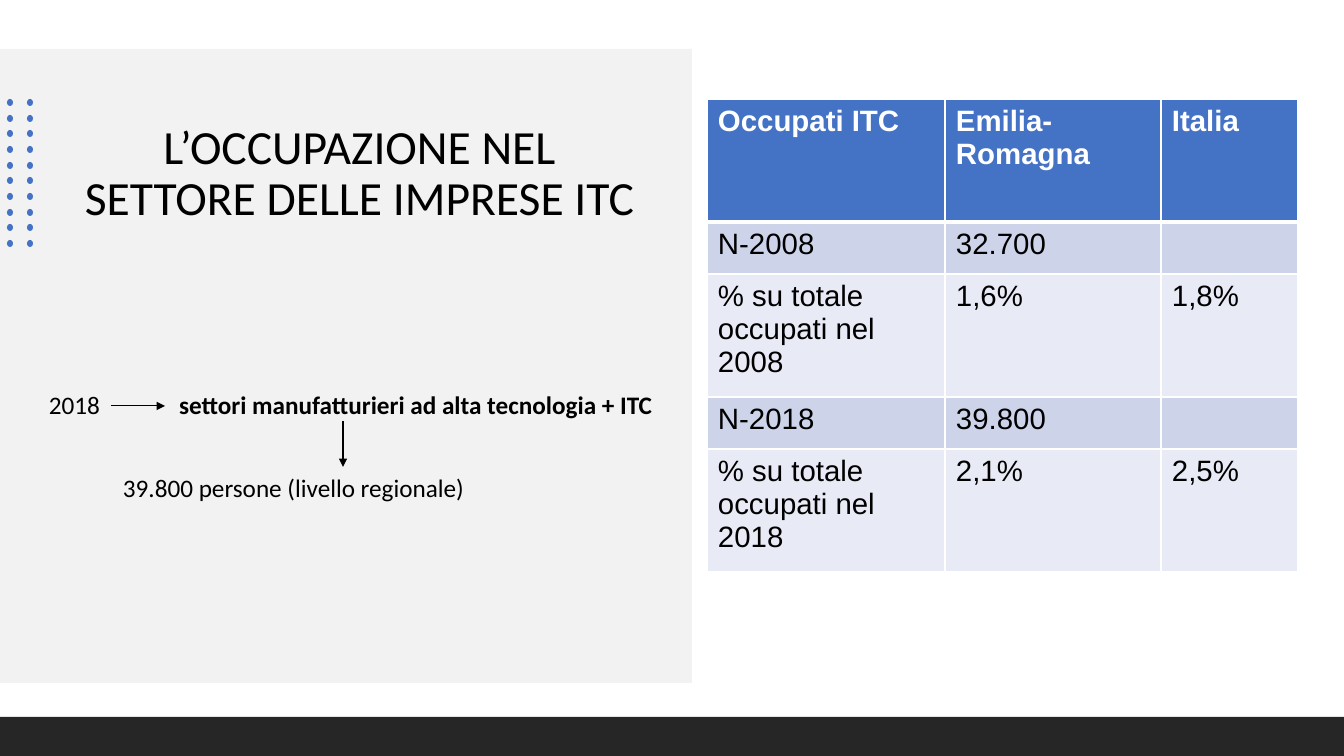
"""Builds the slide on employment in the ITC sector."""
from typing import NamedTuple

from lxml import etree
from pptx import Presentation
from pptx.dml.color import RGBColor
from pptx.enum.shapes import MSO_CONNECTOR, MSO_SHAPE
from pptx.enum.text import MSO_ANCHOR, PP_ALIGN
from pptx.oxml.ns import qn
from pptx.slide import Slide
from pptx.table import _Cell
from pptx.text.text import _Paragraph
from pptx.util import Emu, Pt

RECTANGLE, OVAL = MSO_SHAPE.RECTANGLE, MSO_SHAPE.OVAL
STRAIGHT = MSO_CONNECTOR.STRAIGHT
MIDDLE, TOP = MSO_ANCHOR.MIDDLE, MSO_ANCHOR.TOP
LEFT, CENTER = PP_ALIGN.LEFT, PP_ALIGN.CENTER

SLIDE_WIDTH, SLIDE_HEIGHT = 1344, 756
EMU_PER_PX = 12192000 / SLIDE_WIDTH

BLACK, WHITE = "000000", "FFFFFF"
PANEL_GREY, FOOTER_GREY, ACCENT_BLUE = "F2F2F2", "262626", "4472C4"
ROW_BANDS = ("CDD4EA", "E8EBF5")


class Box(NamedTuple):
    left: int
    top: int
    width: int
    height: int


class Label(NamedTuple):
    text: str
    box: Box
    size: int = 18
    bold: bool = False
    align: PP_ALIGN = LEFT


class Arrow(NamedTuple):
    from_x: int
    from_y: int
    to_x: int
    to_y: int


LABELS = (
    Label("L’OCCUPAZIONE NEL SETTORE DELLE IMPRESE ITC", Box(76, 99, 567, 151), 34, align=CENTER),
    Label("2018", Box(49, 390, 60, 32)),
    Label("settori manufatturieri ad alta tecnologia + ITC", Box(179, 390, 500, 32), bold=True),
    Label("39.800 persone (livello regionale)", Box(123, 473, 400, 32)),
)
ARROWS = (Arrow(111, 406, 165, 406), Arrow(343, 421, 343, 467))

DOT_COLUMNS = (7, 27)
DOT_ROWS, DOT_TOP, DOT_SPAN = 10, 99, 141

TABLE_LEFT, TABLE_TOP = 707, 99
COLUMN_WIDTHS = (238, 216, 137)
ROW_HEIGHTS = (123, 52, 123, 52, 123)
EMPLOYMENT = (
    ("Occupati ITC", "Emilia-Romagna", "Italia"),
    ("N-2008", "32.700", ""),
    ("% su totale occupati nel 2008", "1,6%", "1,8%"),
    ("N-2018", "39.800", ""),
    ("% su totale occupati nel 2018", "2,1%", "2,5%"),
)


def px(length: int) -> Emu:
    """Turn pixels into EMU."""
    return Emu(round(length * EMU_PER_PX))


def color(value: str) -> RGBColor:
    """Turn a hex string into a colour."""
    return RGBColor.from_string(value)


def style(paragraph: _Paragraph, family: str, size: int, fill: str, bold: bool) -> None:
    """Set the font of a whole paragraph."""
    font = paragraph.font
    font.name, font.size, font.bold = family, Pt(size), bold
    font.color.rgb = color(fill)


def add_block(slide: Slide, kind: MSO_SHAPE, box: Box, fill: str) -> None:
    """Draw a plain filled shape."""
    block = slide.shapes.add_shape(kind, *map(px, box))
    block.shadow.inherit = False
    block.fill.solid()
    block.fill.fore_color.rgb = color(fill)
    block.line.fill.background()


def add_label(slide: Slide, label: Label) -> None:
    """Write a label centred vertically in its box."""
    frame = slide.shapes.add_textbox(*map(px, label.box)).text_frame
    frame.word_wrap = True
    frame.vertical_anchor = MIDDLE
    frame.margin_left = frame.margin_right = frame.margin_top = frame.margin_bottom = 0
    paragraph = frame.paragraphs[0]
    paragraph.text = label.text
    paragraph.alignment = label.align
    paragraph.line_spacing = 0.9
    style(paragraph, "Calibri", label.size, BLACK, label.bold)


def add_arrow(slide: Slide, arrow: Arrow) -> None:
    """Draw a thin line with a triangle at its end."""
    connector = slide.shapes.add_connector(STRAIGHT, *map(px, arrow))
    connector.line.color.rgb = color(BLACK)
    connector.line.width = Pt(0.75)
    etree.SubElement(connector.line._get_or_add_ln(), qn("a:tailEnd"), type="triangle")
    etree.SubElement(connector._element.spPr, qn("a:effectLst"))


def add_borders(cell: _Cell, row: int) -> None:
    """Give a cell white borders, thicker below the header."""
    widths = {"L": 1, "R": 1, "T": 3 if row == 1 else 1, "B": 3 if row == 0 else 1}
    properties = cell._tc.get_or_add_tcPr()
    for side, width in widths.items():
        border = etree.SubElement(properties, qn(f"a:ln{side}"), w=str(Pt(width)))
        solid = etree.SubElement(border, qn("a:solidFill"))
        etree.SubElement(solid, qn("a:srgbClr"), val=WHITE)


def fill_cell(cell: _Cell, text: str, row: int) -> None:
    """Write and style one table cell."""
    header = row == 0
    add_borders(cell, row)
    cell.fill.solid()
    cell.fill.fore_color.rgb = color(ACCENT_BLUE if header else ROW_BANDS[(row - 1) % 2])
    cell.margin_left = cell.margin_right = px(11)
    cell.margin_top = cell.margin_bottom = px(6)
    cell.vertical_anchor = TOP
    paragraph = cell.text_frame.paragraphs[0]
    paragraph.text = text
    style(paragraph, "Arial", 21, WHITE if header else BLACK, header)


def add_employment_table(slide: Slide) -> None:
    """Draw the table of people employed."""
    box = Box(TABLE_LEFT, TABLE_TOP, sum(COLUMN_WIDTHS), sum(ROW_HEIGHTS))
    table = slide.shapes.add_table(len(ROW_HEIGHTS), len(COLUMN_WIDTHS), *map(px, box)).table
    for column, width in zip(table.columns, COLUMN_WIDTHS):
        column.width = px(width)
    for row, (height, texts) in enumerate(zip(ROW_HEIGHTS, EMPLOYMENT)):
        table.rows[row].height = px(height)
        for column, text in enumerate(texts):
            fill_cell(table.cell(row, column), text, row)


def main() -> None:
    """Build and save the slide."""
    deck = Presentation()
    deck.slide_width, deck.slide_height = px(SLIDE_WIDTH), px(SLIDE_HEIGHT)
    slide = deck.slides.add_slide(deck.slide_layouts[6])
    add_block(slide, RECTANGLE, Box(0, 49, 692, 634), PANEL_GREY)
    for row in range(DOT_ROWS):
        top = DOT_TOP + round(row * DOT_SPAN / (DOT_ROWS - 1))
        for left in DOT_COLUMNS:
            add_block(slide, OVAL, Box(left, top, 6, 7), ACCENT_BLUE)
    for label in LABELS:
        add_label(slide, label)
    add_block(slide, RECTANGLE, Box(0, 717, SLIDE_WIDTH, 39), FOOTER_GREY)
    add_employment_table(slide)
    for arrow in ARROWS:
        add_arrow(slide, arrow)
    deck.save("out.pptx")


if __name__ == "__main__":
    main()
